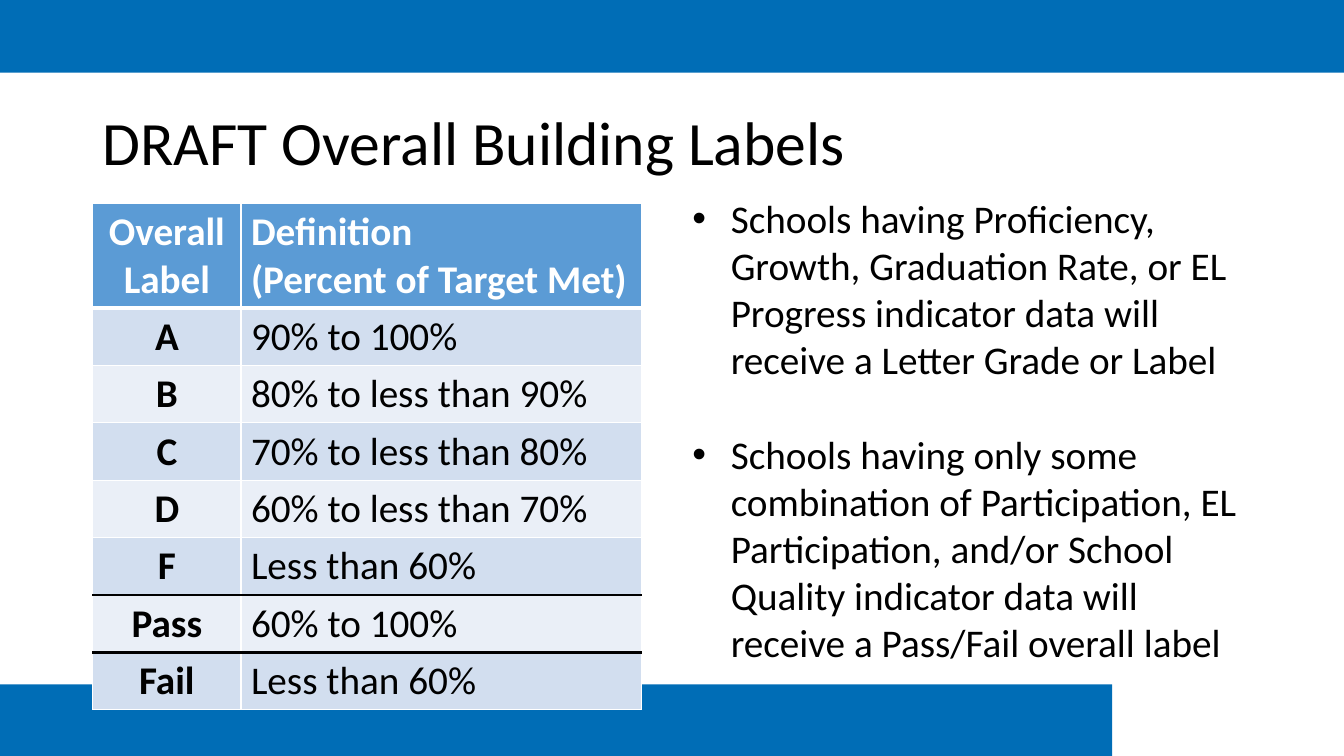
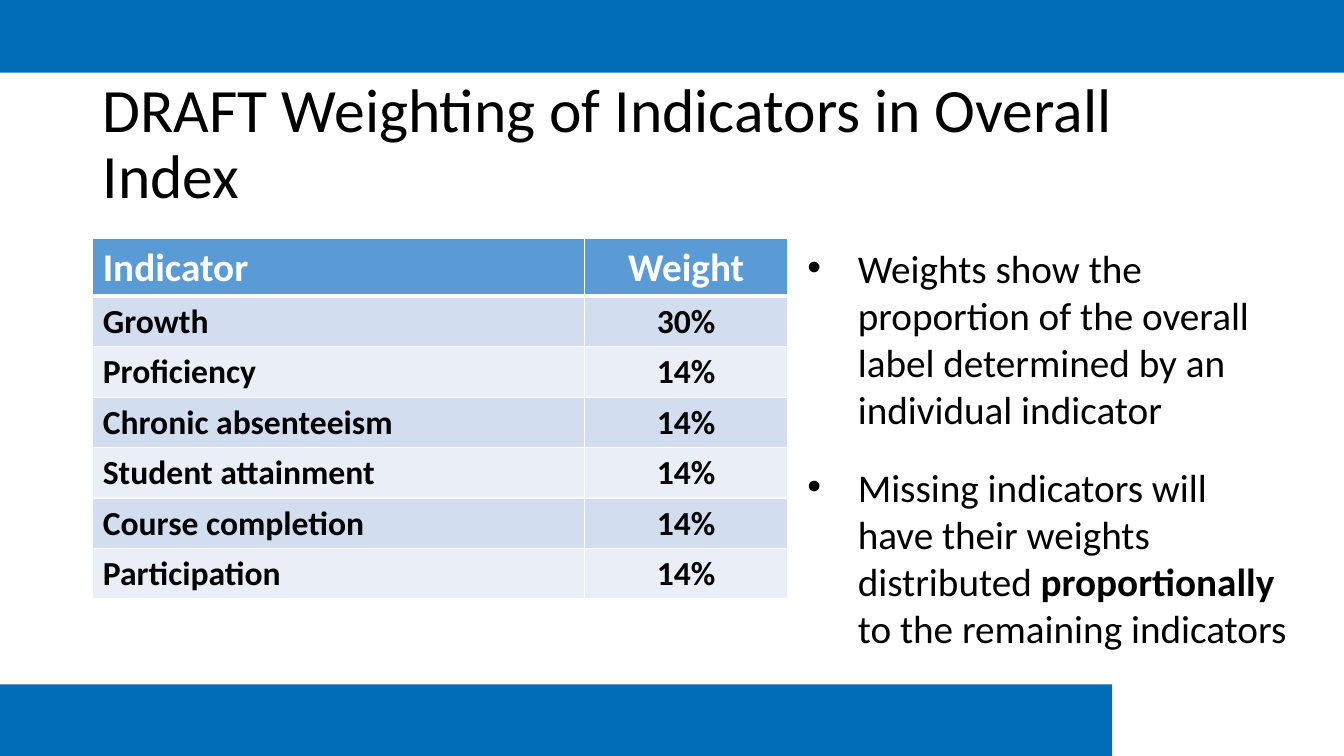
"""Build two slides on draft building labels and indicator weights."""
from lxml import etree
from pptx import Presentation
from pptx import util as u
from pptx.dml.color import RGBColor
from pptx.enum import shapes, text
from pptx.oxml.ns import qn

Inches, Pt = u.Inches, u.Pt
COLORS = {"band": "006DB6", "header": "5B9BD5", "odd": "D2DEEF",
          "even": "EAEFF7", "white": "FFFFFF", "black": "000000"}
FONT = "Calibri"
BANDS = [(0, 6.79, 11.03, 0.72), (0, 0, 13.33, 0.72)]
TITLE_BOX = (0.92, 0.72, 11.5, 1.45)
CENTER = text.PP_ALIGN.CENTER

SLIDES = [
    {
        "title": "DRAFT Overall Building Labels",
        "table": {
            "at": (0.92, 2.02), "cols": (1.47, 3.97), "heights": (1.02, 0.57),
            "size": 28, "center": 0, "bold": (0,), "rules": (5, 6),
            "rows": [
                ("Overall Label", "Definition\n(Percent of Target Met)"),
                ("A", "90% to 100%"),
                ("B", "80% to less than 90%"),
                ("C", "70% to less than 80%"),
                ("D", "60% to less than 70%"),
                ("F", "Less than 60%"),
                ("Pass", "60% to 100%"),
                ("Fail", "Less than 60%"),
            ],
        },
        "body": {
            "at": (6.77, 1.88, 5.64, 4.81), "indent": 0.38, "gap": 34,
            "items": [
                [("Schools having Proficiency, Growth, Graduation Rate, or EL "
                  "Progress indicator data will receive a Letter Grade or Label", False)],
                [("Schools having only some combination of Participation, EL "
                  "Participation, and/or School Quality indicator data will "
                  "receive a Pass/Fail overall label", False)],
            ],
        },
    },
    {
        "title": "DRAFT Weighting of Indicators in Overall Index",
        "table": {
            "at": (0.92, 2.37), "cols": (4.88, 2.01), "heights": (0.57, 0.5),
            "size": 24, "center": 1, "bold": (0, 1), "rules": (),
            "rows": [
                ("Indicator", "Weight"),
                ("Growth", "30%"),
                ("Proficiency", "14%"),
                ("Chronic absenteeism", "14%"),
                ("Student attainment", "14%"),
                ("Course completion", "14%"),
                ("Participation", "14%"),
            ],
        },
        "body": {
            "at": (7.91, 2.37, 4.96, 4.81), "indent": 0.5, "gap": 22,
            "items": [
                [("Weights show the proportion of the overall label determined "
                  "by an individual indicator", False)],
                [("Missing indicators will have their weights distributed ", False),
                 ("proportionally", True), (" to the remaining indicators", False)],
            ],
        },
    },
]


def rgb(name):
    return RGBColor.from_string(COLORS[name])


def style(font, size, color="black", bold=False):
    for key, value in {"name": FONT, "size": Pt(size), "bold": bold}.items():
        setattr(font, key, value)
    font.color.rgb = rgb(color)


def add_bands(s):
    for box in BANDS:
        sp = s.shapes.add_shape(shapes.MSO_SHAPE.RECTANGLE, *map(Inches, box))
        sp.shadow.inherit = False
        sp.fill.solid()
        sp.fill.fore_color.rgb = rgb("band")
        sp.line.fill.background()


def add_box(s, box):
    tf = s.shapes.add_textbox(*map(Inches, box)).text_frame
    tf.word_wrap = True
    return tf


def add_title(s, title):
    tf = add_box(s, TITLE_BOX)
    tf.vertical_anchor = text.MSO_ANCHOR.MIDDLE
    p = tf.paragraphs[0]
    p.line_spacing = 0.9
    r = p.add_run()
    r.text = title
    style(r.font, 44)


def add_bullet(p, indent):
    pPr = p._p.get_or_add_pPr()
    pPr.set("marL", str(Inches(indent)))
    pPr.set("indent", str(-Inches(indent)))
    etree.SubElement(pPr, qn("a:buFont"), typeface="Arial")
    etree.SubElement(pPr, qn("a:buChar"), char="•")


def add_body(s, body):
    tf = add_box(s, body["at"])
    for i, runs in enumerate(body["items"]):
        p = tf.add_paragraph() if i else tf.paragraphs[0]
        add_bullet(p, body["indent"])
        if i:
            p.space_before = Pt(body["gap"])
        for words, bold in runs:
            r = p.add_run()
            r.text = words
            style(r.font, 28, bold=bold)


def set_border(cell, side, color, width):
    ln = etree.SubElement(cell._tc.get_or_add_tcPr(), qn("a:ln" + side), w=str(Pt(width)))
    fill = etree.SubElement(ln, qn("a:solidFill"))
    etree.SubElement(fill, qn("a:srgbClr"), val=COLORS[color])


def add_table(s, spec):
    rows, cols = spec["rows"], spec["cols"]
    head, rest = spec["heights"]
    heights = [head] + [rest] * (len(rows) - 1)
    size = (sum(cols), sum(heights))
    table = s.shapes.add_table(len(rows), len(cols),
                               *map(Inches, spec["at"] + size)).table
    for column, width in zip(table.columns, cols):
        column.width = Inches(width)

    edges = {0: ("white", 3), **{i: ("black", 2.25) for i in spec["rules"]}}
    thin = ("white", 1)
    for i, values in enumerate(rows):
        table.rows[i].height = Inches(heights[i])
        fill = "header" if i == 0 else "odd" if i % 2 else "even"
        for j, value in enumerate(values):
            cell = table.cell(i, j)
            borders = {"L": thin, "R": thin, "T": edges.get(i - 1, thin),
                       "B": edges.get(i, thin)}
            for side, line in borders.items():
                set_border(cell, side, *line)
            cell.fill.solid()
            cell.fill.fore_color.rgb = rgb(fill)
            cell.text = value
            for p in cell.text_frame.paragraphs:
                if j == spec["center"]:
                    p.alignment = CENTER
                for r in p.runs:
                    if i == 0:
                        style(r.font, 28, "white", True)
                    else:
                        style(r.font, spec["size"], bold=j in spec["bold"])


def main():
    prs = Presentation()
    prs.slide_width, prs.slide_height = Inches(13.33), Inches(7.5)
    for content in SLIDES:
        s = prs.slides.add_slide(prs.slide_layouts[6])
        add_bands(s)
        add_title(s, content["title"])
        add_body(s, content["body"])
        add_table(s, content["table"])
    prs.save("out.pptx")


if __name__ == "__main__":
    main()
